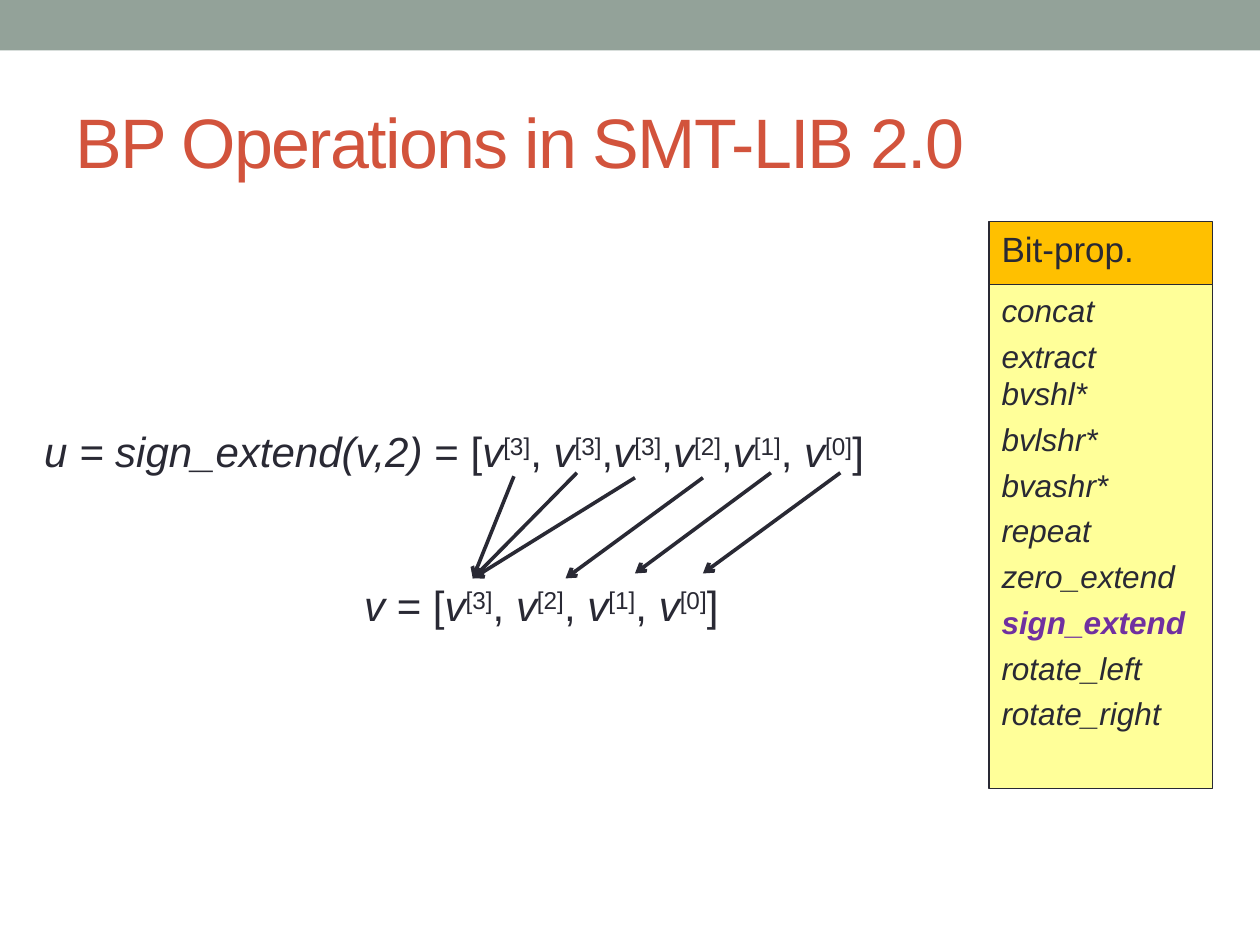
from lxml.etree import SubElement
from pptx import Presentation
from pptx.dml.color import RGBColor
from pptx.enum.shapes import MSO_CONNECTOR, MSO_SHAPE
from pptx.enum.text import MSO_ANCHOR, PP_ALIGN
from pptx.oxml.ns import qn
from pptx.util import Cm, Pt

COLORS = {
    "bar": "93A299",
    "title": "D2533C",
    "ink": "292934",
    "header": "FFC000",
    "list": "FFFF99",
    "highlight": "7030A0",
}
FONT = "Arial"

OPERATIONS = [
    "concat", "extract\nbvshl*", "bvlshr*", "bvashr*", "repeat",
    "zero_extend", "sign_extend", "rotate_left", "rotate_right",
]
# Each bit of a vector: its index and the separator that follows it
EXTENDED_BITS = [(3, ", "), (3, ","), (3, ","), (2, ","), (1, ", "), (0, "]")]
SOURCE_BITS = [(3, ", "), (2, ", "), (1, ", "), (0, "]")]
# Arrow tip (at the source bit) and arrow end (at the extended bit), in cm
BIT_ARROWS = [
    ((14.17, 11.56), (16.94, 9.53)),
    ((12.8, 11.56), (15.54, 9.53)),
    ((11.4, 11.66), (14.17, 9.63)),
    ((9.53, 11.66), (12.8, 9.63)),
    ((9.53, 11.66), (11.63, 9.53)),
    ((9.53, 11.66), (10.36, 9.6)),
]


def color(name):
    return RGBColor.from_string(COLORS[name])


class SlideBuilder:
    def __init__(self, slide):
        self.slide = slide

    def style(self, paragraph, size, color_name="ink", bold=False, italic=False):
        font = paragraph.font
        font.name, font.size = FONT, Pt(size)
        font.bold, font.italic = bold, italic
        font.color.rgb = color(color_name)

    def title(self, text, left, top, width, height):
        title = self.slide.shapes.title
        title.left, title.top = Cm(left), Cm(top)
        title.width, title.height = Cm(width), Cm(height)
        title.text_frame.vertical_anchor = MSO_ANCHOR.MIDDLE
        paragraph = title.text_frame.paragraphs[0]
        paragraph.alignment = PP_ALIGN.LEFT
        self.style(paragraph, 40, "title")
        run = paragraph.add_run()
        run.text = text
        run._r.get_or_add_rPr().set("spc", "-100")

    def rectangle(self, left, top, width, height, fill, outlined=True):
        shape = self.slide.shapes.add_shape(
            MSO_SHAPE.RECTANGLE, Cm(left), Cm(top), Cm(width), Cm(height))
        shape.shadow.inherit = False
        shape.fill.solid()
        shape.fill.fore_color.rgb = color(fill)
        if outlined:
            shape.line.color.rgb = color("ink")
            shape.line.width = Pt(0.75)
        else:
            shape.line.fill.background()
        return shape

    def panel(self, left, top, width, height, fill, entries, size,
              gap, italic=False, highlight=None):
        """Draw a filled box with one left-aligned paragraph per entry."""
        frame = self.rectangle(left, top, width, height, fill).text_frame
        frame.word_wrap = True
        frame.vertical_anchor = MSO_ANCHOR.TOP
        for number, entry in enumerate(entries):
            paragraph = frame.add_paragraph() if number else frame.paragraphs[0]
            paragraph.alignment = PP_ALIGN.LEFT
            paragraph.space_before = Pt(gap if number else 2)
            marked = entry == highlight
            self.style(paragraph, size, "highlight" if marked else "ink",
                       bold=marked, italic=italic)
            for line_number, line in enumerate(entry.split("\n")):
                if line_number:
                    paragraph.add_line_break()
                paragraph.add_run().text = line

    def formula(self, left, top, width, name, bits):
        """Write name = [v[i], ...] with the bit indices raised."""
        box = self.slide.shapes.add_textbox(Cm(left), Cm(top), Cm(width), Cm(1.27))
        box.text_frame.word_wrap = True
        paragraph = box.text_frame.paragraphs[0]
        self.style(paragraph, 24)

        def add(text, italic=False, raised=False):
            run = paragraph.add_run()
            run.text = text
            run.font.italic = italic
            if raised:
                run._r.get_or_add_rPr().set("baseline", "30000")

        add(name + " ", italic=True)
        add("= [")
        for index, separator in bits:
            add("v", italic=True)
            add(f"[{index}]", raised=True)
            add(separator)

    def arrow(self, tip, end):
        connector = self.slide.shapes.add_connector(
            MSO_CONNECTOR.STRAIGHT, *(Cm(value) for value in tip + end))
        connector.line.color.rgb = color("ink")
        connector.line.width = Pt(2.08)
        SubElement(connector.line._get_or_add_ln(), qn("a:headEnd"), type="arrow")
        SubElement(connector._element.spPr, qn("a:effectLst"))


def main():
    presentation = Presentation()
    presentation.slide_width, presentation.slide_height = Cm(25.4), Cm(19.05)
    title_only = presentation.slide_layouts[5]
    builder = SlideBuilder(presentation.slides.add_slide(title_only))

    builder.rectangle(0, 0, 25.4, 1.02, "bar", outlined=False)
    builder.title("BP Operations in SMT-LIB 2.0", 1.27, 1.47, 22.86, 2.74)
    builder.panel(19.94, 4.47, 4.5, 1.27, "header", ["Bit-prop."], 20, gap=4)
    builder.panel(19.94, 5.74, 4.5, 10.16, "list", OPERATIONS, 18, gap=4.5,
                  italic=True, highlight="sign_extend")
    builder.formula(7.09, 11.56, 10.8, "v", SOURCE_BITS)
    builder.formula(0.64, 8.46, 18.85, "u = sign_extend(v,2)", EXTENDED_BITS)
    for tip, end in BIT_ARROWS:
        builder.arrow(tip, end)

    presentation.save("out.pptx")


if __name__ == "__main__":
    main()
